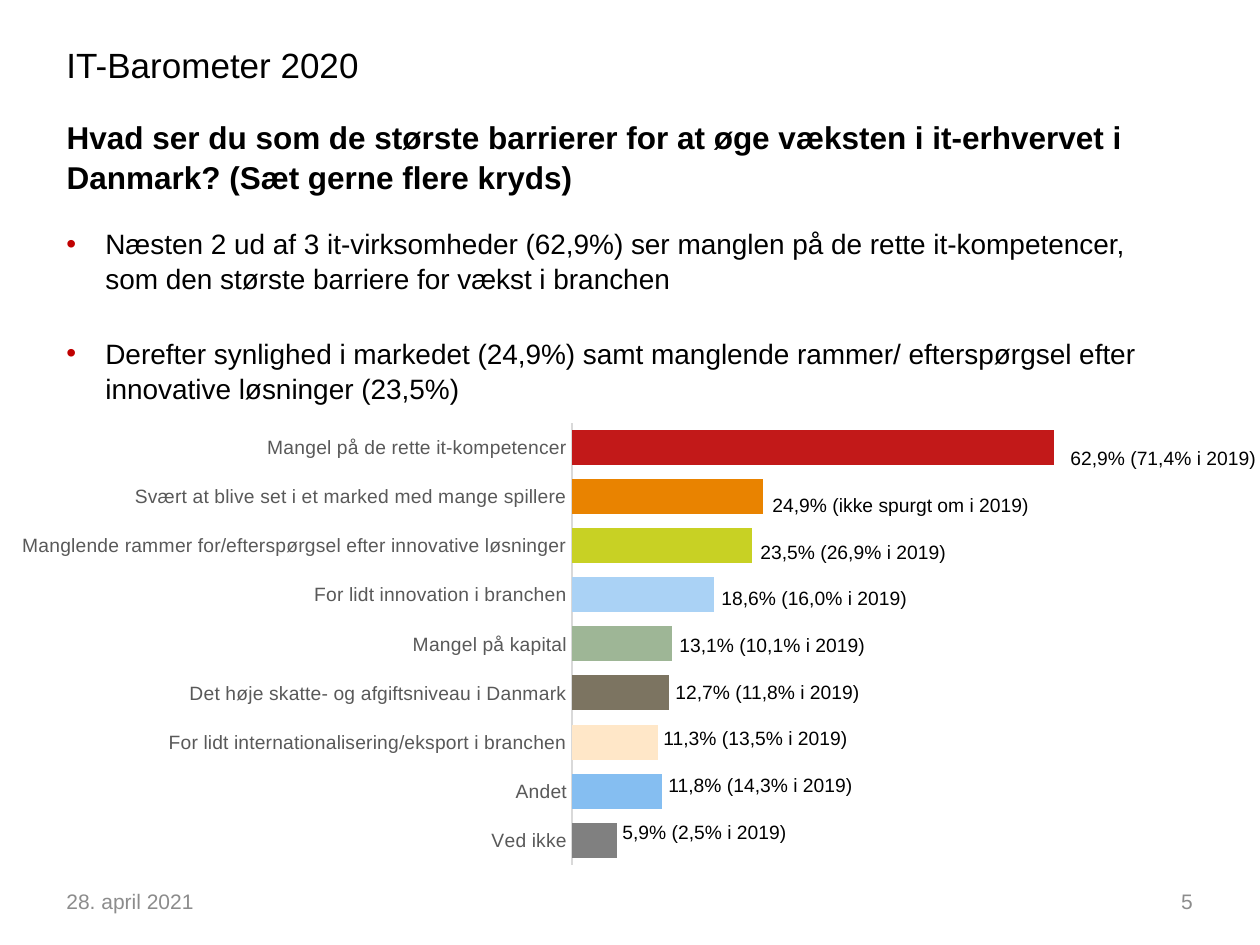
from dataclasses import dataclass

import pptx
import pptx.chart.data
import pptx.dml.color
import pptx.enum.chart
import pptx.enum.text
import pptx.oxml
import pptx.util
from lxml import etree

EMU_PER_PX = 914400 / 126
FONT = "Arial"
BLACK = "000000"
FOOTER_GREY = "8C8C8C"
ALIGN = pptx.enum.text.PP_ALIGN
ANCHOR = pptx.enum.text.MSO_ANCHOR


@dataclass
class Barrier:
    name: str
    share: float
    hex_color: str
    label: str
    label_left: int
    label_width: int = 212


@dataclass
class Caption:
    text: str
    left: int
    top: int
    width: int
    height: int
    size: int
    hex_color: str = BLACK
    align: ALIGN = ALIGN.LEFT
    anchor: ANCHOR = ANCHOR.TOP
    wrap: bool = True


BARRIERS = [
    Barrier("Mangel på de rette it-kompetencer", 0.629, "C21919", "62,9% (71,4% i 2019)", 1058),
    Barrier("Svært at blive set i et marked med mange spillere", 0.249, "E98300",
            "24,9% (ikke spurgt om i 2019)", 760, 283),
    Barrier("Manglende rammer for/efterspørgsel efter innovative løsninger", 0.235, "C8D124",
            "23,5% (26,9% i 2019)", 748),
    Barrier("For lidt innovation i branchen", 0.186, "AAD2F5", "18,6% (16,0% i 2019)", 709),
    Barrier("Mangel på kapital", 0.131, "9EB696", "13,1% (10,1% i 2019)", 667),
    Barrier("Det høje skatte- og afgiftsniveau i Danmark", 0.127, "7C7461",
            "12,7% (11,8% i 2019)", 663),
    Barrier("For lidt internationalisering/eksport i branchen", 0.113, "FFE7C8",
            "11,3% (13,5% i 2019)", 651),
    Barrier("Andet", 0.118, "85BEF1", "11,8% (14,3% i 2019)", 656),
    Barrier("Ved ikke", 0.059, "808080", "5,9% (2,5% i 2019)", 610, 190),
]
CAPTIONS = [
    Caption("IT-Barometer 2020", 54, 37, 400, 50, 20),
    Caption("28. april 2021", 54, 876, 294, 50, 12, FOOTER_GREY, anchor=ANCHOR.MIDDLE),
    Caption("5", 911, 876, 294, 50, 12, FOOTER_GREY, ALIGN.RIGHT, ANCHOR.MIDDLE),
]
TITLE = ("Hvad ser du som de største barrierer for at øge væksten i it-erhvervet i "
         "Danmark? (Sæt gerne flere kryds)")
FINDINGS = [
    "Næsten 2 ud af 3 it-virksomheder (62,9%) ser manglen på de rette it-kompetencer, "
    "som den største barriere for vækst i branchen",
    "Derefter synlighed i markedet (24,9%) samt manglende rammer/ efterspørgsel efter "
    "innovative løsninger (23,5%)",
]
LABEL_TOP = 440
LABEL_STEP = 46.75


def px(length: float) -> pptx.util.Emu:
    return pptx.util.Emu(round(length * EMU_PER_PX))


def color(hex_color: str) -> pptx.dml.color.RGBColor:
    return pptx.dml.color.RGBColor.from_string(hex_color)


def style(font, size: int, hex_color: str = BLACK, bold: bool = False) -> None:
    font.name = FONT
    font.size = pptx.util.Pt(size)
    font.bold = bold
    font.color.rgb = color(hex_color)


def add_span(para, text: str, size: int, hex_color: str = BLACK, bold: bool = False) -> None:
    span = para.add_run()
    span.text = text
    style(span.font, size, hex_color, bold)


def add_caption(page, caption: Caption) -> None:
    box = page.shapes.add_textbox(
        px(caption.left), px(caption.top), px(caption.width), px(caption.height))
    frame = box.text_frame
    frame.word_wrap = caption.wrap
    frame.vertical_anchor = caption.anchor
    para = frame.paragraphs[0]
    para.alignment = caption.align
    add_span(para, caption.text, caption.size, caption.hex_color)


def fill_title(page) -> None:
    title = page.shapes.title
    title.left, title.top, title.width, title.height = px(54), px(110), px(1134), px(69)
    frame = title.text_frame
    frame.word_wrap = True
    frame.auto_size = pptx.enum.text.MSO_AUTO_SIZE.NONE
    frame.vertical_anchor = ANCHOR.TOP
    para = frame.paragraphs[0]
    para.alignment = ALIGN.LEFT
    para.line_spacing = 1.05
    add_span(para, TITLE, 18, bold=True)


def add_bullet(para) -> None:
    properties = para._p.get_or_add_pPr()
    properties.set("marL", str(px(39)))
    properties.set("indent", str(-px(39)))
    namespace = pptx.oxml.ns.nsdecls("a")
    for markup in (f'<a:buClr {namespace}><a:srgbClr val="C00000"/></a:buClr>',
                   f'<a:buFont {namespace} typeface="{FONT}"/>',
                   f'<a:buChar {namespace} char="•"/>'):
        properties.append(pptx.oxml.parse_xml(markup))


def add_findings(page) -> None:
    box = page.shapes.add_textbox(px(54), px(219), px(1134), px(212))
    frame = box.text_frame
    frame.word_wrap = True
    for index, finding in enumerate(FINDINGS):
        para = frame.add_paragraph() if index else frame.paragraphs[0]
        add_bullet(para)
        para.line_spacing = 1.05
        if index:
            para.space_before = pptx.util.Pt(22.5)
        add_span(para, finding, 16)


def place_plot(chart) -> None:
    plot_area = chart._chartSpace.chart.plotArea
    for old_layout in plot_area.findall(pptx.oxml.ns.qn("c:layout")):
        plot_area.remove(old_layout)
    layout = etree.Element(pptx.oxml.ns.qn("c:layout"))
    manual = etree.SubElement(layout, pptx.oxml.ns.qn("c:manualLayout"))
    settings = {"layoutTarget": "inner", "xMode": "edge", "yMode": "edge",
                "x": 572 / 1134, "y": 9 / 461, "w": 536 / 1134, "h": 442 / 461}
    for tag, value in settings.items():
        etree.SubElement(manual, pptx.oxml.ns.qn(f"c:{tag}")).set("val", str(value))
    plot_area.insert(0, layout)


def add_barrier_chart(page) -> None:
    bars = BARRIERS[::-1]
    data = pptx.chart.data.CategoryChartData(number_format="0.00%")
    data.categories = [bar.name for bar in bars]
    data.add_series("Series 1", [bar.share for bar in bars])
    chart = page.shapes.add_chart(
        pptx.enum.chart.XL_CHART_TYPE.BAR_CLUSTERED,
        px(0), px(414), px(1134), px(461), data).chart
    chart.has_legend = False
    chart.has_title = False
    style(chart.font, 10)
    plot = chart.plots[0]
    plot.vary_by_categories = False
    plot.gap_width = 40
    plot.overlap = -25
    series = plot.series[0]
    series.format.fill.solid()
    series.format.fill.fore_color.rgb = color(BARRIERS[0].hex_color)
    for index, bar in enumerate(bars[:-1]):
        fill = series.points[index].format.fill
        fill.solid()
        fill.fore_color.rgb = color(bar.hex_color)
    names = chart.category_axis
    names.major_tick_mark = pptx.enum.chart.XL_TICK_MARK.NONE
    names.format.line.color.rgb = color("D9D9D9")
    names.format.line.width = pptx.util.Pt(0.75)
    style(names.tick_labels.font, 11, "595959")
    shares = chart.value_axis
    shares.minimum_scale = 0
    shares.maximum_scale = 0.7
    shares.has_major_gridlines = False
    shares.visible = False
    place_plot(chart)


def main() -> None:
    deck = pptx.Presentation()
    deck.slide_width, deck.slide_height = px(1260), px(945)
    page = deck.slides.add_slide(deck.slide_layouts[5])
    add_barrier_chart(page)
    fill_title(page)
    add_findings(page)
    for caption in CAPTIONS:
        add_caption(page, caption)
    for row, bar in enumerate(BARRIERS):
        top = round(LABEL_TOP + row * LABEL_STEP)
        add_caption(page, Caption(
            bar.label, bar.label_left, top, bar.label_width, 36, 11, wrap=False))
    deck.save("out.pptx")


if __name__ == "__main__":
    main()
